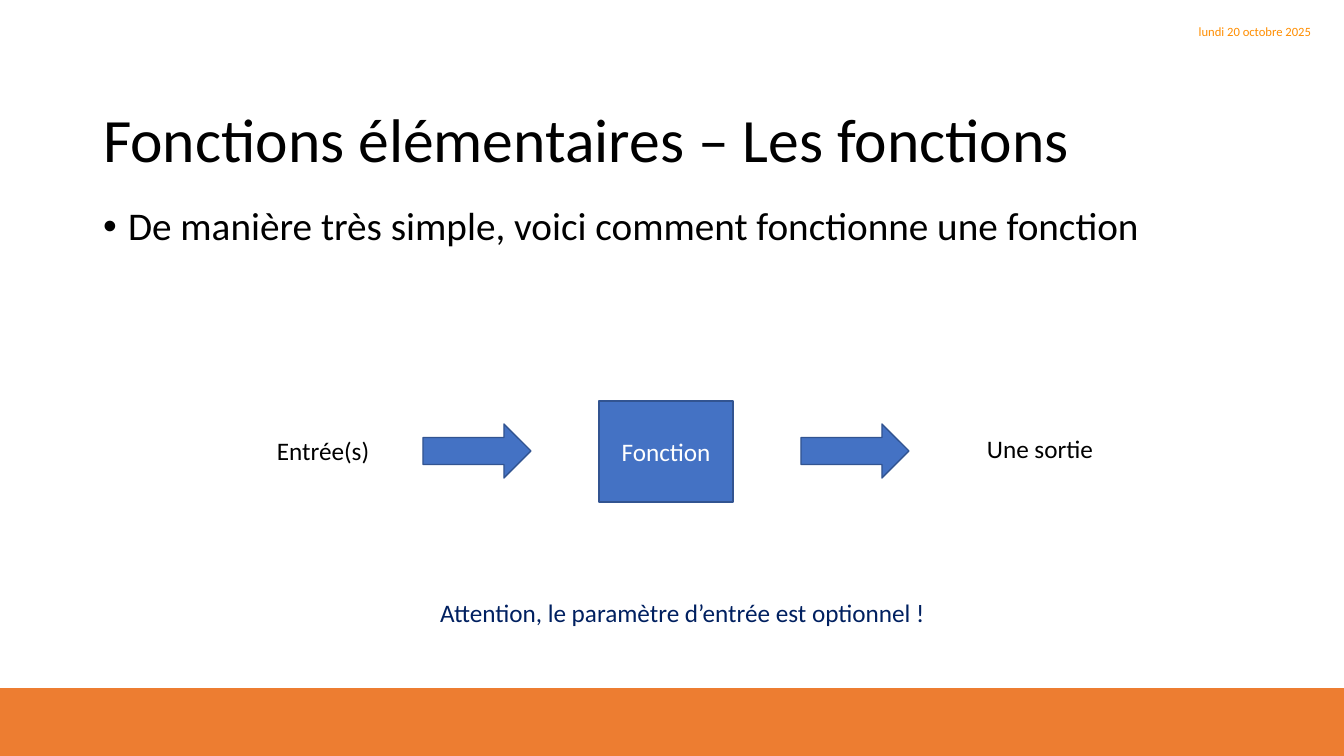
from dataclasses import dataclass

from lxml.etree import SubElement
from pptx import Presentation
from pptx.dml.color import RGBColor
from pptx.enum.shapes import MSO_SHAPE
from pptx.enum.text import MSO_ANCHOR, MSO_AUTO_SIZE, PP_ALIGN
from pptx.oxml.ns import qn
from pptx.util import Emu, Pt

PX_PER_INCH = 100.8


@dataclass(frozen=True)
class Theme:
    font: str = "Calibri"
    black: str = "000000"
    white: str = "FFFFFF"
    navy: str = "002060"
    amber: str = "FF8E01"
    orange: str = "ED7D31"
    blue: str = "4472C4"
    blue_edge: str = "325491"
    title_size: int = 44
    body_size: int = 28
    label_size: int = 18
    date_size: int = 9


THEME = Theme()


def px(length):
    return Emu(round(length * 914400 / PX_PER_INCH))


def write(holder, text, size, color, align=PP_ALIGN.LEFT,
          anchor=MSO_ANCHOR.TOP, wrap=True, fit=MSO_AUTO_SIZE.NONE):
    """Put one formatted paragraph in a shape and return it."""
    frame = holder.text_frame
    frame.text = text
    frame_format = {"word_wrap": wrap, "auto_size": fit,
                    "vertical_anchor": anchor}
    for name, value in frame_format.items():
        setattr(frame, name, value)
    paragraph = frame.paragraphs[0]
    paragraph.alignment = align
    run_font = paragraph.runs[0].font
    for name, value in {"name": THEME.font, "size": Pt(size)}.items():
        setattr(run_font, name, value)
    run_font.color.rgb = RGBColor.from_string(color)
    return paragraph


def fill_placeholder(placeholder, box, text, size, anchor):
    for name, value in zip(("left", "top", "width", "height"), box):
        setattr(placeholder, name, px(value))
    paragraph = write(placeholder, text, size, THEME.black, anchor=anchor)
    paragraph.line_spacing = 0.9
    return paragraph


def add_bullet(paragraph, indent):
    properties = paragraph._p.get_or_add_pPr()
    properties.set("marL", str(px(indent)))
    properties.set("indent", str(-px(indent)))
    SubElement(properties, qn("a:buFont"), typeface="Arial")
    SubElement(properties, qn("a:buChar"), char="•")


def add_block(slide, kind, box, fill, edge):
    block = slide.shapes.add_shape(kind, *map(px, box))
    block.shadow.inherit = False
    block.fill.solid()
    block.fill.fore_color.rgb = RGBColor.from_string(fill)
    block.line.color.rgb = RGBColor.from_string(edge)
    block.line.width = Pt(1)
    return block


def add_label(slide, box, text, size, color, **text_format):
    label = slide.shapes.add_textbox(*map(px, box))
    write(label, text, size, color, **text_format)


def main():
    deck = Presentation()
    deck.slide_width, deck.slide_height = px(1344), px(756)
    slide = deck.slides.add_slide(deck.slide_layouts[1])

    # Footer band and date
    add_block(slide, MSO_SHAPE.RECTANGLE, (0, 689, 1344, 67),
              THEME.orange, THEME.orange)
    add_label(slide, (1139, 21, 182, 21), "lundi 20 octobre 2025",
              THEME.date_size, THEME.amber,
              align=PP_ALIGN.RIGHT, anchor=MSO_ANCHOR.MIDDLE)

    # Title and introduction
    title, introduction = slide.placeholders
    fill_placeholder(title, (93, 99, 1159, 88),
                     "Fonctions élémentaires – Les fonctions",
                     THEME.title_size, MSO_ANCHOR.MIDDLE)
    sentence = fill_placeholder(
        introduction, (93, 202, 1159, 480),
        "De manière très simple, voici comment fonctionne une fonction",
        THEME.body_size, MSO_ANCHOR.TOP)
    add_bullet(sentence, 25)
    sentence.space_before = Pt(0)

    # Function box with an arrow on each side
    function_box = add_block(slide, MSO_SHAPE.RECTANGLE, (599, 401, 134, 101),
                             THEME.blue, THEME.blue_edge)
    write(function_box, "Fonction", THEME.label_size, THEME.white,
          align=PP_ALIGN.CENTER, anchor=MSO_ANCHOR.MIDDLE)
    for arrow_left in (423, 801):
        add_block(slide, MSO_SHAPE.RIGHT_ARROW, (arrow_left, 424, 108, 54),
                  THEME.blue, THEME.blue_edge)

    # Input and output labels
    for text, box in (("Entrée(s)", (267, 430, 114, 40)),
                      ("Une sortie", (977, 428, 128, 40))):
        add_label(slide, box, text, THEME.label_size, THEME.black,
                  wrap=False, fit=MSO_AUTO_SIZE.SHAPE_TO_FIT_TEXT)

    # Closing remark
    add_label(slide, (415, 592, 535, 40),
              "Attention, le paramètre d’entrée est optionnel !",
              THEME.label_size, THEME.navy, align=PP_ALIGN.CENTER,
              fit=MSO_AUTO_SIZE.SHAPE_TO_FIT_TEXT)

    deck.save("out.pptx")


if __name__ == "__main__":
    main()
